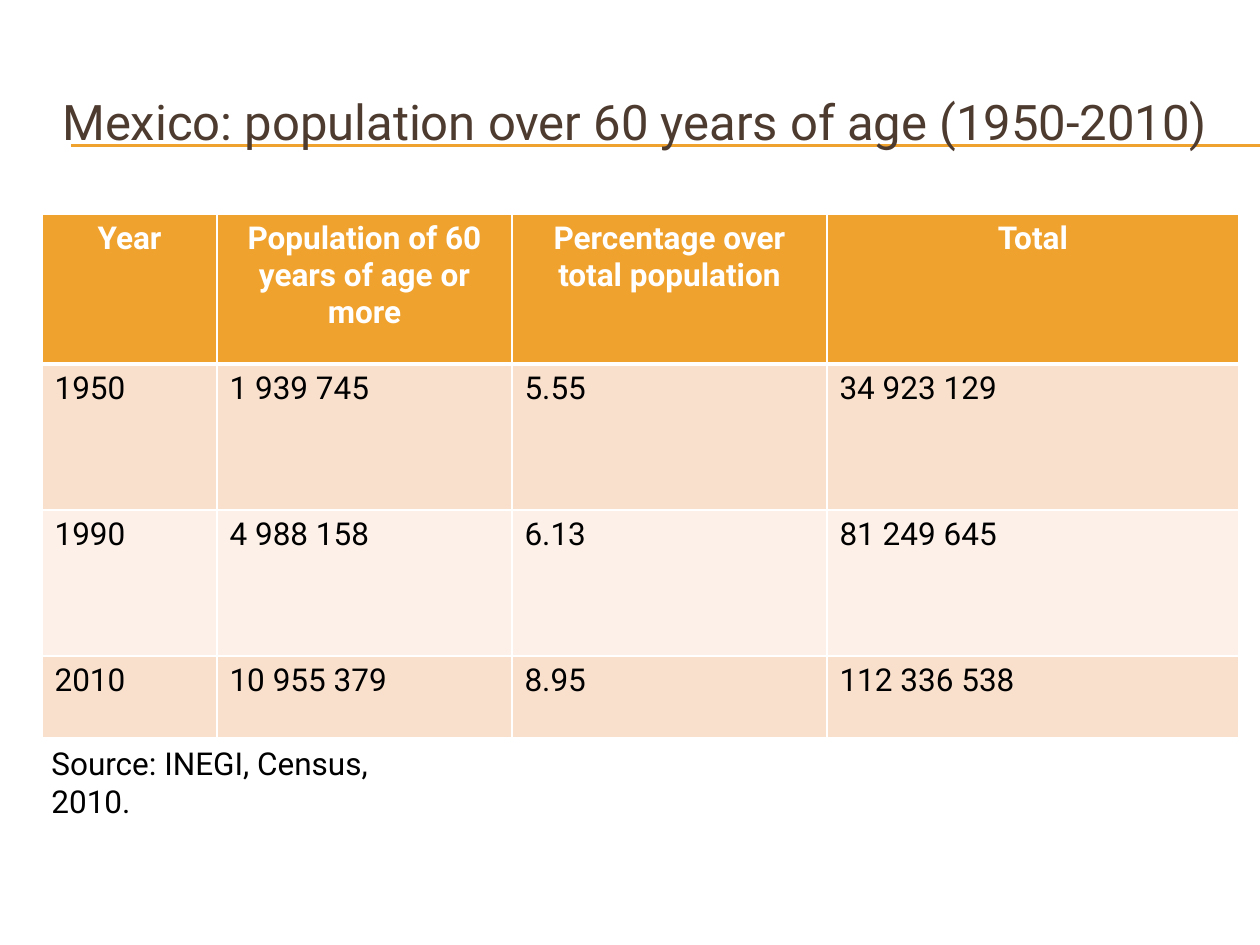
from lxml import etree
from pptx import Presentation
from pptx.dml.color import RGBColor
from pptx.enum import shapes, text
from pptx.oxml.ns import qn
from pptx.util import Pt

PX = 914400 / 126  # EMU in one px
COLORS = {
    "accent": "F0A22E",
    "title": "4E3B30",
    "band_dark": "F9E0CD",
    "band_light": "FCF0E8",
    "white": "FFFFFF",
    "black": "000000",
}


def px(*lengths):
    return [round(length * PX) for length in lengths]


def write(frame, words, size=18, color="black", bold=False, align=text.PP_ALIGN.LEFT,
          anchor=text.MSO_ANCHOR.TOP):
    frame.word_wrap = True
    frame.vertical_anchor = anchor
    paragraph = frame.paragraphs[0]
    paragraph.alignment = align
    run = paragraph.add_run()
    run.text = words
    run.font.name = "Roboto"
    run.font.size = Pt(size)
    run.font.bold = bold
    run.font.color.rgb = RGBColor.from_string(COLORS[color])


deck = Presentation()
deck.slide_width, deck.slide_height = px(1260, 945)
slide = deck.slides.add_slide(deck.slide_layouts[5])

# Double rule behind the title
for y in (145, 146):
    rule = slide.shapes.add_connector(shapes.MSO_CONNECTOR.STRAIGHT, *px(71, y, 1260, y))
    rule.line.color.rgb = RGBColor.from_string(COLORS["accent"])
    rule.line.width = Pt(0.75)
    etree.SubElement(rule._element.spPr, qn("a:effectLst"))
    slide.shapes._spTree.insert(2, rule._element)

# Title
title = slide.shapes.title
title.left, title.top, title.width, title.height = px(42, 63, 1197, 116)
write(title.text_frame, "Mexico: population over 60 years of age (1950-2010) ", size=28,
      color="title", align=text.PP_ALIGN.CENTER, anchor=text.MSO_ANCHOR.MIDDLE)

# Population table
census = [
    ["Year", "Population of 60 years of age or more", "Percentage over total population", "Total"],
    ["1950", "1 939 745", "5.55", "34 923 129"],
    ["1990", "4 988 158", "6.13", "81 249 645"],
    ["2010", "10 955 379", "8.95", "112 336 538"],
]
column_widths = px(175, 295, 315, 412)
row_heights = px(150, 146, 146, 82)
population = slide.shapes.add_table(len(census), len(column_widths), *px(42, 214, 1197, 524)).table
for column, width in zip(population.columns, column_widths):
    column.width = width

for r, (row, height) in enumerate(zip(census, row_heights)):
    population.rows[r].height = height
    header = r == 0
    fill = "accent" if header else "band_dark" if r % 2 else "band_light"
    for c, words in enumerate(row):
        cell = population.cell(r, c)
        write(cell.text_frame, words, color="white" if header else "black", bold=header,
              align=text.PP_ALIGN.CENTER if header else text.PP_ALIGN.LEFT)

        # White borders, thick between the header and the first year
        properties = cell._tc.get_or_add_tcPr()
        for side in ("lnL", "lnR", "lnT", "lnB"):
            thick = (r, side) in ((0, "lnB"), (1, "lnT"))
            border = etree.SubElement(properties, qn(f"a:{side}"), w=str(Pt(3 if thick else 1)))
            solid = etree.SubElement(border, qn("a:solidFill"))
            etree.SubElement(solid, qn("a:srgbClr"), val=COLORS["white"])

        cell.fill.solid()
        cell.fill.fore_color.rgb = RGBColor.from_string(COLORS[fill])

# Source note
source = slide.shapes.add_textbox(*px(39, 738, 420, 50))
write(source.text_frame, "Source: INEGI, Census, 2010.")

deck.save("out.pptx")
